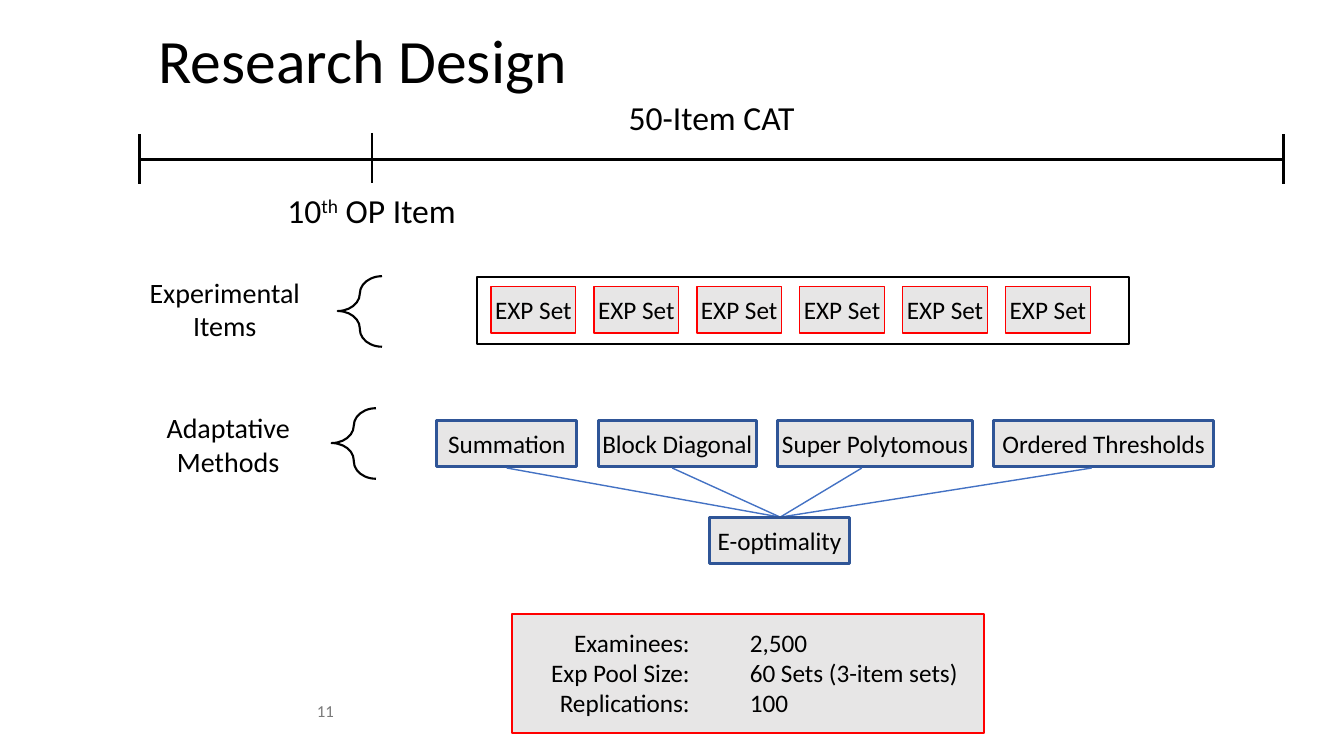
from dataclasses import dataclass

from lxml.etree import SubElement
from pptx import Presentation
from pptx.dml.color import RGBColor as RGB
from pptx.enum.shapes import MSO_CONNECTOR as Link, MSO_SHAPE as Kind
from pptx.enum.text import MSO_ANCHOR as Anchor, PP_ALIGN as Align
from pptx.oxml.ns import qn
from pptx.util import Pt


@dataclass(frozen=True)
class Theme:
    face: str = "Calibri"
    black: RGB = RGB(0, 0, 0)
    gray: RGB = RGB(0x79, 0x79, 0x79)
    fill: RGB = RGB(0xE7, 0xE6, 0xE6)
    red: RGB = RGB(0xFF, 0, 0)
    navy: RGB = RGB(0x2F, 0x55, 0x97)
    blue: RGB = RGB(0x44, 0x72, 0xC4)
    title: int = 44
    head: int = 24
    side: int = 20
    body: int = 18
    note: int = 12


T = Theme()


def style(para, size, color=T.black, align=Align.CENTER):
    para.alignment = align
    font = para.font
    font.name, font.size, font.color.rgb = T.face, Pt(size), color


def place(shape, box):
    shape.left, shape.top, shape.width, shape.height = map(Pt, box)


def write(slide, box, lines, size, color=T.black, align=Align.CENTER):
    """Add a text box with one paragraph per line."""
    frame = slide.shapes.add_textbox(*map(Pt, box)).text_frame
    frame.word_wrap = True
    frame.vertical_anchor = Anchor.MIDDLE
    frame.text = "\n".join(lines)
    for para in frame.paragraphs:
        style(para, size, color, align)
    return frame


def draw(slide, kind, box, color, width, fill=None):
    """Add an outlined shape, filled or hollow."""
    shape = slide.shapes.add_shape(kind, *map(Pt, box))
    shape.shadow.inherit = False
    shape.line.color.rgb, shape.line.width = color, Pt(width)
    if fill is None:
        shape.fill.background()
    else:
        shape.fill.solid()
        shape.fill.fore_color.rgb = fill
    return shape


def block(slide, box, text, color, width):
    """Add a gray box with a centred label."""
    frame = draw(slide, Kind.RECTANGLE, box, color, width, T.fill).text_frame
    frame.word_wrap = False
    frame.vertical_anchor = Anchor.MIDDLE
    frame.text = text
    style(frame.paragraphs[0], T.body)


def rule(slide, start, end, color, width):
    """Add a straight line."""
    line = slide.shapes.add_connector(Link.STRAIGHT, *map(Pt, start + end))
    line.line.color.rgb, line.line.width = color, Pt(width)
    SubElement(line._element.spPr, qn("a:effectLst"))


def brace(slide, left, top):
    shape = draw(slide, Kind.LEFT_BRACE, (left, top, 31.7, 50.4), T.black, 1.5)
    shape.adjustments[0], shape.adjustments[1] = 0.481, 0.494


def heading(slide):
    title = slide.shapes.title
    place(title, (106, 18, 802, 81))
    frame = title.text_frame
    frame.text = "Research Design"
    frame.vertical_anchor = Anchor.TOP
    para = frame.paragraphs[0]
    para.line_spacing = 0.9
    style(para, T.title, align=Align.LEFT)


def timeline(slide):
    left, right, top = 99.4, 916.6, 95.8
    for x, y in ((left, top), (right, top), (265.7, 95)):
        rule(slide, (x, y), (x, y + 36), T.black, 2)
    rule(slide, (left, top + 18), (right, top + 18), T.black, 2)
    write(slide, (365.8, 62.6, 285, 42.5), ["50-Item CAT"], T.head)
    frame = write(slide, (182.2, 128.9, 166.3, 42.5), ["10"], T.head)
    para = frame.paragraphs[0]
    power, rest = para.add_run(), para.add_run()
    power.text, rest.text = "th", " OP Item"
    power._r.get_or_add_rPr().set("baseline", "30000")


def items(slide):
    write(slide, (98.6, 178, 124, 85), ["Experimental Items"], T.side)
    brace(slide, 241.2, 197.3)
    for i in range(6):
        block(slide, (350.8 + 73.5 * i, 204.8, 60.5, 33.1),
              "EXP Set", T.red, 1)
    draw(slide, Kind.RECTANGLE, (340.6, 198, 465.8, 47.5), T.black, 1.5)


def methods(slide):
    write(slide, (101, 275, 124, 85), ["Adaptative Methods"], T.side)
    brace(slide, 236.9, 291.6)
    top, high, gap = 300.2, 33.1, 15.3
    goal = (557.3, 369.4)
    # Label, box width, x where its line starts
    ways = (("Summation", 100, 362), ("Block Diagonal", 113, 480.2),
            ("Super Polytomous", 139, 615.6),
            ("Ordered Thresholds", 157, 779.8))
    left = 312
    for text, wide, x in ways:
        block(slide, (left, top, wide, high), text, T.navy, 2.25)
        rule(slide, (x, top + high + 1), goal, T.blue, 1)
        left += wide + gap
    block(slide, (506.9, 369.4, 100, high), "E-optimality", T.navy, 2.25)


def facts(slide):
    draw(slide, Kind.RECTANGLE, (365.8, 438.5, 337, 85), T.red, 1, T.fill)
    rows = (("Examinees:", "2,500"),
            ("Exp Pool Size:", "60 Sets (3-item sets)"),
            ("Replications:", "100"))
    names, values = zip(*rows)
    write(slide, (365.8, 447.1, 134, 66.2), names, T.body, align=Align.RIGHT)
    write(slide, (528.5, 447.1, 174.2, 66.2), values, T.body, align=Align.LEFT)


def main():
    deck = Presentation()
    deck.slide_width, deck.slide_height = Pt(960), Pt(540)
    slide = deck.slides.add_slide(deck.slide_layouts[5])
    heading(slide)
    timeline(slide)
    items(slide)
    methods(slide)
    facts(slide)
    # Page number
    write(slide, (29.5, 493.2, 216, 28.8), ["11"], T.note, T.gray, Align.RIGHT)
    deck.save("out.pptx")


if __name__ == "__main__":
    main()
